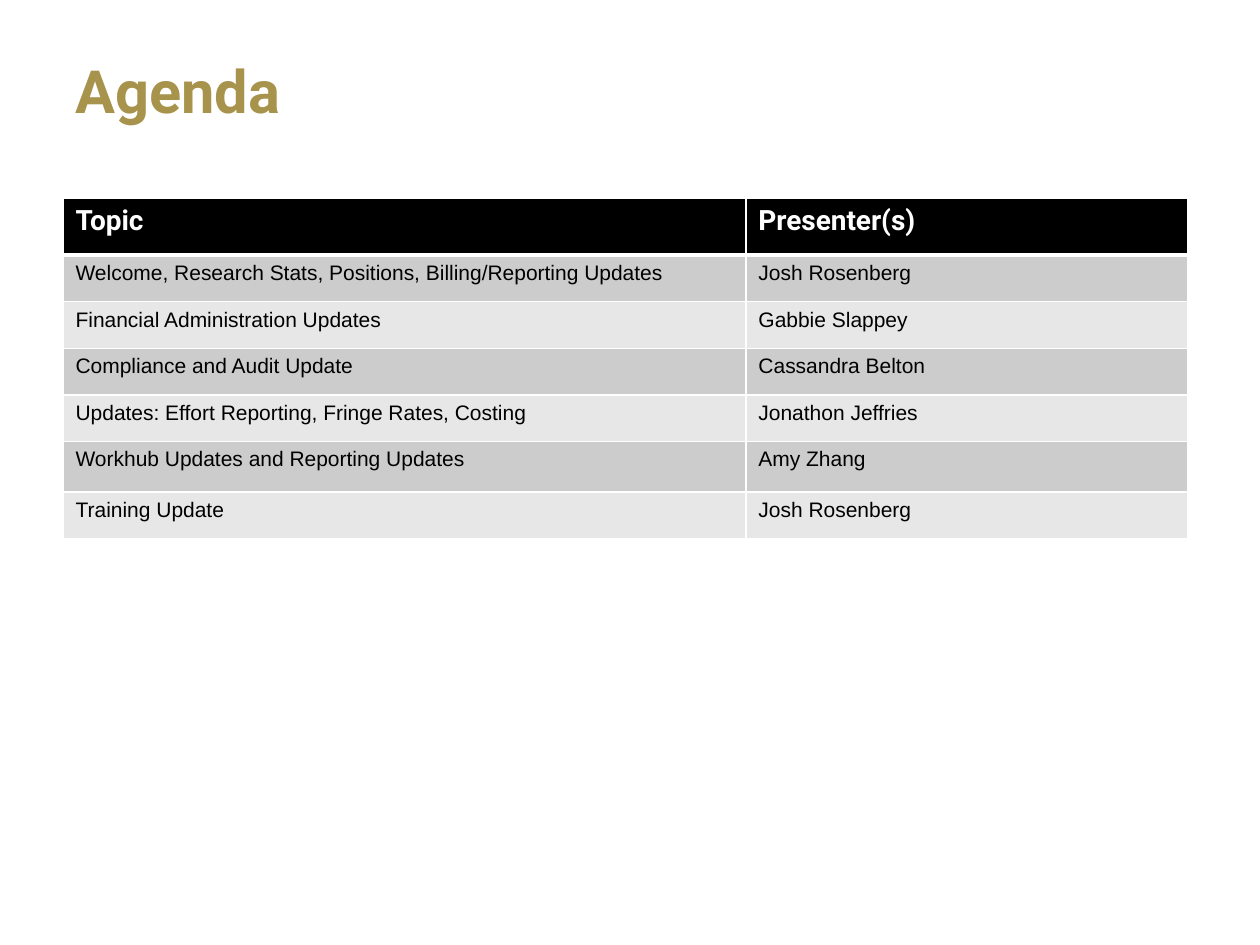
from dataclasses import dataclass

from lxml.etree import SubElement
from pptx import Presentation
from pptx.dml.color import RGBColor
from pptx.enum.text import MSO_ANCHOR
from pptx.oxml.ns import qn
from pptx.util import Inches, Pt

WIDTH, HEIGHT = Inches(10), Inches(7.5)

AGENDA = [
    ("Topic", "Presenter(s)"),
    ("Welcome, Research Stats, Positions, Billing/Reporting Updates", "Josh Rosenberg"),
    ("Financial Administration Updates", "Gabbie Slappey"),
    ("Compliance and Audit Update", "Cassandra Belton"),
    ("Updates: Effort Reporting, Fringe Rates, Costing", "Jonathon Jeffries"),
    ("Workhub Updates and Reporting Updates", "Amy Zhang"),
    ("Training Update", "Josh Rosenberg"),
]
COLUMN_INCHES = (5.42, 3.51)
ROW_INCHES = (0.45, 0.37, 0.37, 0.37, 0.37, 0.4, 0.37)


@dataclass(frozen=True)
class Theme:
    heading_font: str = "Roboto"
    body_font: str = "Arial"
    title_size: int = 34
    header_size: int = 16
    body_size: int = 12
    gold: str = "A7934B"
    black: str = "000000"
    white: str = "FFFFFF"
    bands: tuple = ("CCCCCC", "E7E7E7")
    rule: int = 1
    header_rule: int = 3


class SlideBuilder:
    def __init__(self, slide, theme):
        self.slide = slide
        self.theme = theme

    def style(self, paragraph, font_name, size, color, bold=False):
        for span in paragraph.runs:
            font = span.font
            font.name, font.size, font.bold = font_name, Pt(size), bold
            font.color.rgb = RGBColor.from_string(color)

    def title(self, text, left, top, width, height):
        """Add the heading; lengths are shares of the slide's size."""
        theme = self.theme
        box = self.slide.shapes.add_textbox(
            int(left * WIDTH), int(top * HEIGHT), int(width * WIDTH), int(height * HEIGHT))
        frame = box.text_frame
        frame.word_wrap = True
        frame.vertical_anchor = MSO_ANCHOR.MIDDLE
        frame.text = text
        para = frame.paragraphs[0]
        para.line_spacing = 0.9
        self.style(para, theme.heading_font, theme.title_size, theme.gold, bold=True)

    def borders(self, cell, top, bottom):
        """Rule all four sides; must run before the cell is filled."""
        theme = self.theme
        properties = cell._tc.get_or_add_tcPr()
        sides = {"L": theme.rule, "R": theme.rule, "T": top, "B": bottom}
        for side, points in sides.items():
            line = SubElement(properties, qn(f"a:ln{side}"), w=str(Pt(points)))
            fill = SubElement(line, qn("a:solidFill"))
            SubElement(fill, qn("a:srgbClr"), val=theme.white)

    def cell(self, cell, text, row):
        theme = self.theme
        header = row == 0
        self.borders(cell,
                     top=theme.header_rule if row == 1 else theme.rule,
                     bottom=theme.header_rule if header else theme.rule)
        cell.fill.solid()
        color = theme.black if header else theme.bands[(row - 1) % len(theme.bands)]
        cell.fill.fore_color.rgb = RGBColor.from_string(color)
        cell.text = text
        para = cell.text_frame.paragraphs[0]
        if header:
            self.style(para, theme.heading_font, theme.header_size, theme.white, bold=True)
        else:
            self.style(para, theme.body_font, theme.body_size, theme.black)

    def table(self, rows, left, top, column_inches, row_inches):
        """Add a banded table; left and top are shares of the slide's size."""
        table = self.slide.shapes.add_table(
            len(rows), len(column_inches), int(left * WIDTH), int(top * HEIGHT),
            Inches(sum(column_inches)), Inches(sum(row_inches))).table
        for column, width in zip(table.columns, column_inches):
            column.width = Inches(width)
        for index, (row, height) in enumerate(zip(rows, row_inches)):
            table.rows[index].height = Inches(height)
            for position, text in enumerate(row):
                self.cell(table.cell(index, position), text, index)


def main():
    deck = Presentation()
    deck.slide_width, deck.slide_height = WIDTH, HEIGHT
    builder = SlideBuilder(deck.slides.add_slide(deck.slide_layouts[6]), Theme())
    builder.title("Agenda", left=0.05, top=0.01, width=0.81, height=0.18)
    builder.table(AGENDA, 0.05, 0.21, COLUMN_INCHES, ROW_INCHES)
    deck.save("out.pptx")


if __name__ == "__main__":
    main()
